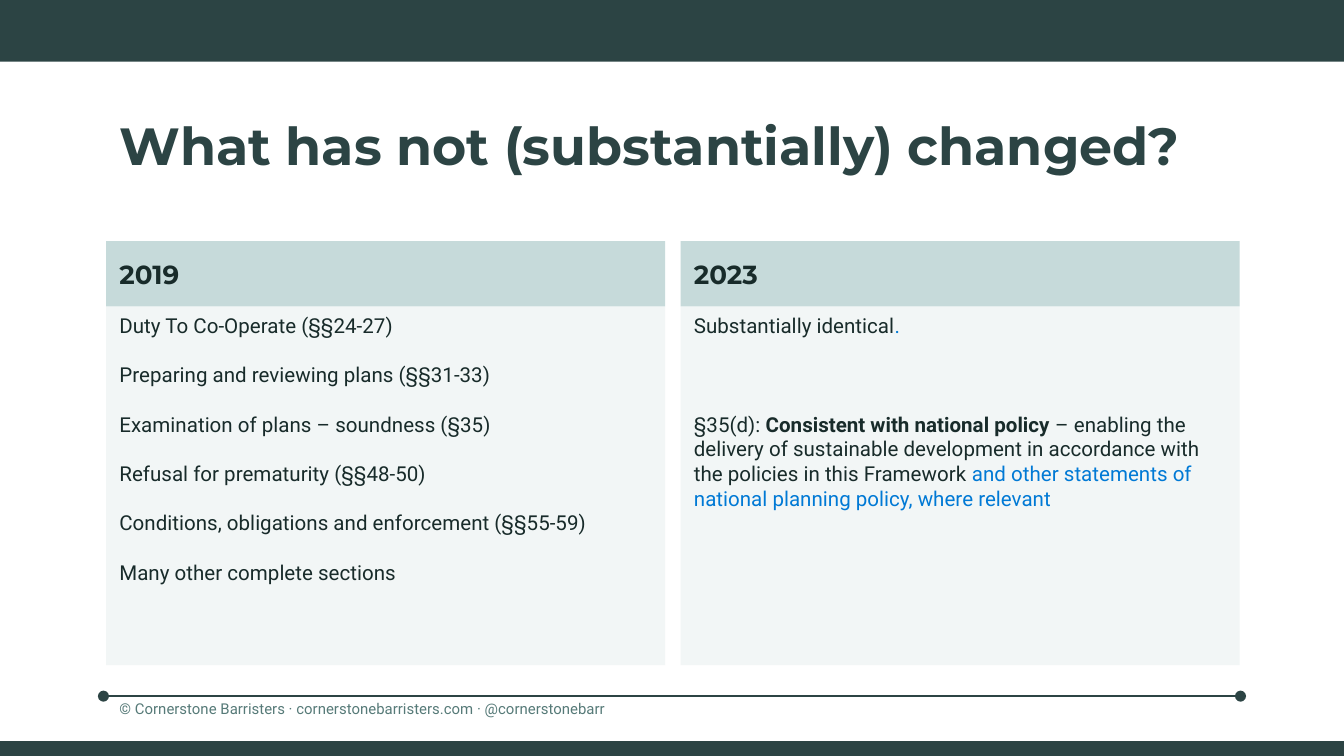
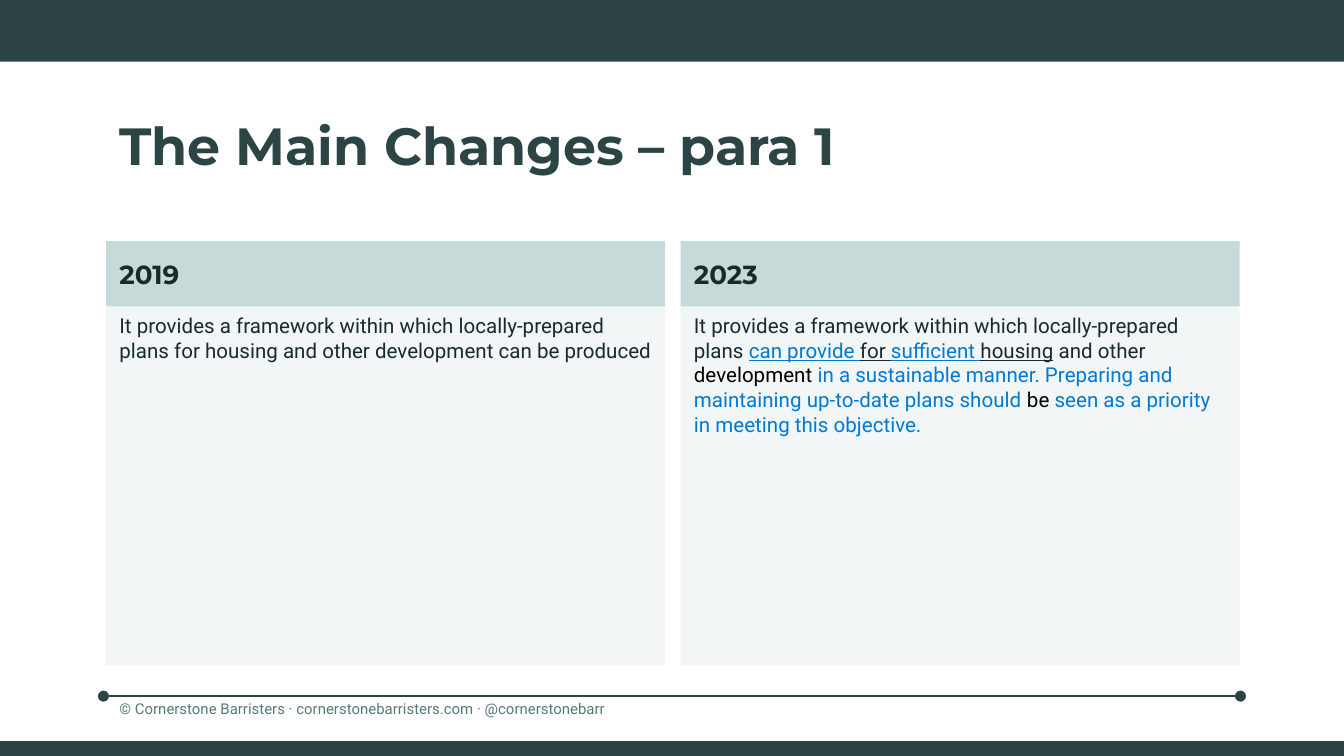
from pptx import Presentation
from pptx.dml.color import RGBColor
from pptx.enum.shapes import MSO_CONNECTOR, MSO_SHAPE
from pptx.enum.text import MSO_ANCHOR, MSO_AUTO_SIZE, PP_ALIGN
from pptx.oxml.ns import qn
from pptx.util import Pt
from lxml.etree import SubElement

PX = 4572  # 200 px to the inch
COLORS = {
    "dark": "2C4444",
    "header": "C6DADA",
    "panel": "F2F6F6",
    "ink": "182B2A",
    "footer": "567A78",
    "changed": "0079D5",
    "black": "000000",
}
HEADING_FONT, BODY_FONT = "Montserrat", "Roboto"
SLIDE_WIDTH, SLIDE_HEIGHT = 2000, 1125
BAND_WIDTH = 2028
TITLE_BOX = (158, 158, 1688, 116)
COMPARISON_BOX = (158, 359, 1687, 631)
FOOTER_BOX = (158, 1028, 990, 62)
COLUMN_GAP, HEADER_HEIGHT = 23, 97
LINE_GAP = 13.2  # one empty body line, in points
FOOTER_TEXT = "© Cornerstone Barristers · cornerstonebarristers.com · @cornerstonebarr"


def color(name):
    return RGBColor.from_string(COLORS[name])


def px(*lengths):
    return [length * PX for length in lengths]


def add_rectangle(slide, box, fill):
    shape = slide.shapes.add_shape(MSO_SHAPE.RECTANGLE, *px(*box))
    shape.shadow.inherit = False
    shape.fill.solid()
    shape.fill.fore_color.rgb = color(fill)
    shape.line.fill.background()
    return shape


def set_insets(frame, horizontal, vertical):
    frame.margin_left = frame.margin_right = horizontal * PX
    frame.margin_top = frame.margin_bottom = vertical * PX


def write(shape, paragraphs, size, font=BODY_FONT, ink="ink", bold=False,
          anchor=MSO_ANCHOR.TOP, gap_lines=0, vertical_inset=10):
    """Each paragraph is a string or a list of (text, color, style) runs."""
    frame = shape.text_frame
    frame.word_wrap = True
    frame.vertical_anchor = anchor
    set_insets(frame, 20, vertical_inset)
    for index, content in enumerate(paragraphs):
        paragraph = frame.paragraphs[0] if index == 0 else frame.add_paragraph()
        paragraph.alignment = PP_ALIGN.LEFT
        if index:
            paragraph.space_before = Pt(gap_lines * LINE_GAP)
        paragraph.font.name = font
        paragraph.font.size = Pt(size)
        paragraph.font.bold = bold
        runs = [(content, ink, "")] if isinstance(content, str) else content
        for text, run_color, style in runs:
            run = paragraph.add_run()
            run.text = text
            run.font.color.rgb = color(run_color)
            if "b" in style:
                run.font.bold = True
            if "u" in style:
                run.font.underline = True


def add_frame(slide):
    # Footer rule with round ends
    rule = slide.shapes.add_connector(
        MSO_CONNECTOR.STRAIGHT, *px(154, 1036, 1846, 1036))
    rule.line.color.rgb = color("dark")
    rule.line.width = Pt(0.75)
    line = rule.line._get_or_add_ln()
    for end in ("a:headEnd", "a:tailEnd"):
        SubElement(line, qn(end), type="oval")
    SubElement(rule._element.spPr, qn("a:effectLst"))

    # Bands and copyright line
    add_rectangle(slide, (0, 0, BAND_WIDTH, 92), "dark")
    footer = slide.shapes.add_textbox(*px(*FOOTER_BOX))
    write(footer, [FOOTER_TEXT], 8, ink="footer", vertical_inset=20)
    footer.text_frame.auto_size = MSO_AUTO_SIZE.SHAPE_TO_FIT_TEXT
    add_rectangle(slide, (0, 1103, BAND_WIDTH, 22), "dark")


def add_column(slide, box, heading, paragraphs, gap_lines):
    left, top, width, height = box
    body = add_rectangle(
        slide, (left, top + HEADER_HEIGHT, width, height - HEADER_HEIGHT), "panel")
    write(body, paragraphs, 11, gap_lines=gap_lines)
    header = add_rectangle(slide, (left, top, width, HEADER_HEIGHT), "header")
    write(header, [heading], 14, HEADING_FONT, bold=True, anchor=MSO_ANCHOR.MIDDLE)


def add_comparison_slide(presentation, title, columns):
    slide = presentation.slides.add_slide(presentation.slide_layouts[6])
    add_frame(slide)
    title_box = slide.shapes.add_textbox(*px(*TITLE_BOX))
    write(title_box, [title], 28, HEADING_FONT, ink="dark", bold=True)

    # Equal columns across the comparison box
    left, top, width, height = COMPARISON_BOX
    column_width = (width - COLUMN_GAP * (len(columns) - 1)) // len(columns)
    for index, column in enumerate(columns):
        column_left = left + index * (column_width + COLUMN_GAP)
        add_column(slide, (column_left, top, column_width, height), *column)


# Each column: heading, paragraphs, empty lines between paragraphs
SLIDES = [
    ("What has not (substantially) changed?", [
        ("2019", [
            "Duty To Co-Operate (§§24-27)",
            "Preparing and reviewing plans (§§31-33)",
            "Examination of plans – soundness (§35)",
            "Refusal for prematurity (§§48-50)",
            "Conditions, obligations and enforcement (§§55-59)",
            "Many other complete sections",
        ], 1),
        ("2023", [
            [("Substantially identical", "ink", ""), (".", "changed", "")],
            [("§35(d): ", "ink", ""),
             ("Consistent with national policy", "ink", "b"),
             (" – enabling the delivery of sustainable development in accordance "
              "with the policies in this Framework ", "ink", ""),
             ("and other statements of national planning policy, where relevant",
              "changed", "")],
        ], 3),
    ]),
    ("The Main Changes – para 1", [
        ("2019", [
            "It provides a framework within which locally-prepared plans for "
            "housing and other development can be produced",
        ], 0),
        ("2023", [
            [("It provides a framework within which locally-prepared plans ", "ink", ""),
             ("can provide ", "changed", "u"),
             ("for ", "ink", "u"),
             ("sufficient ", "changed", "u"),
             ("housing", "ink", "u"),
             (" and other ", "ink", ""),
             ("development ", "black", ""),
             ("in a sustainable manner. Preparing and maintaining up-to-date "
              "plans should ", "changed", ""),
             ("be ", "black", ""),
             ("seen as a priority in meeting this objective.", "changed", "")],
        ], 0),
    ]),
]


def main():
    presentation = Presentation()
    presentation.slide_width, presentation.slide_height = px(SLIDE_WIDTH, SLIDE_HEIGHT)
    for title, columns in SLIDES:
        add_comparison_slide(presentation, title, columns)
    presentation.save("out.pptx")


if __name__ == "__main__":
    main()
